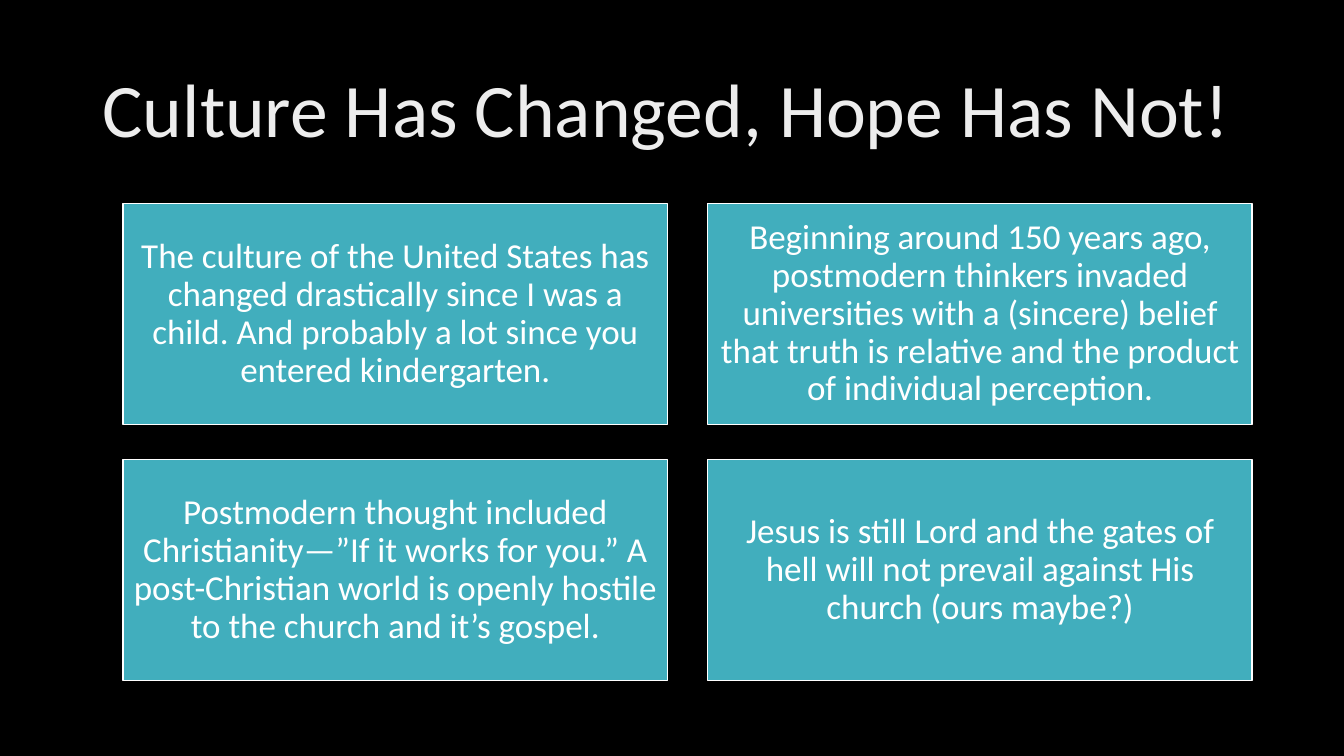
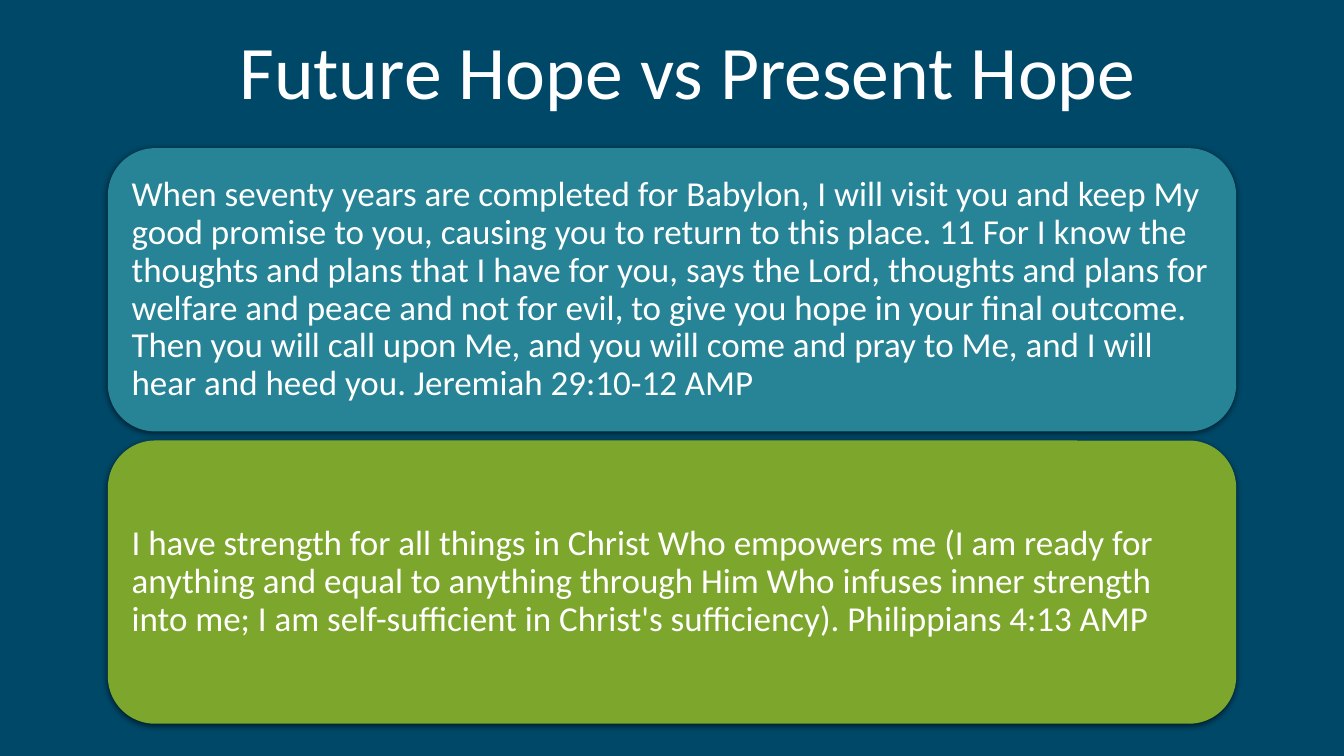
from lxml import etree
from pptx import Presentation
from pptx.dml.color import RGBColor
from pptx.enum import shapes, text
from pptx.oxml import parse_xml
from pptx.oxml.ns import nsdecls
from pptx.util import Inches, Pt

FONT = "Calibri"
WHITE, SOFT_WHITE = "FFFFFF", "EDEDED"
BLACK, NAVY = "000000", "004868"
AQUA, TEAL, GREEN = "41AEBD", "268496", "7DA62C"
TITLE_SIZE, BODY_SIZE = 54, 25

CULTURE_CARDS = [
    "The culture of the United States has changed drastically since I was a child. "
    "And probably a lot since you entered kindergarten.",
    "Beginning around 150 years ago, postmodern thinkers invaded universities with a "
    "(sincere) belief that truth is relative and the product of individual perception.",
    "Postmodern thought included Christianity—”If it works for you.” A post-Christian "
    "world is openly hostile to the church and it’s gospel.",
    "Jesus is still Lord and the gates of hell will not prevail against His church "
    "(ours maybe?)",
]
HOPE_PANELS = [
    (TEAL,
     "When seventy years are completed for Babylon, I will visit you and keep My good "
     "promise to you, causing you to return to this place. 11 For I know the thoughts and "
     "plans that I have for you, says the Lord, thoughts and plans for welfare and peace "
     "and not for evil, to give you hope in your final outcome. Then you will call upon "
     "Me, and you will come and pray to Me, and I will hear and heed you. "
     "Jeremiah 29:10-12 AMP"),
    (GREEN,
     "I have strength for all things in Christ Who empowers me (I am ready for anything "
     "and equal to anything through Him Who infuses inner strength into me; I am "
     "self-sufficient in Christ's sufficiency). Philippians 4:13 AMP"),
]


def rgb(value):
    """Turn a hex string into a colour."""
    return RGBColor.from_string(value)


def write(sp, content, size, color, align):
    """Set one vertically centred paragraph in a shape."""
    tf = sp.text_frame
    tf.word_wrap = True
    tf.vertical_anchor = text.MSO_ANCHOR.MIDDLE
    tf.margin_left = tf.margin_right = Inches(0.1)
    tf.margin_top = tf.margin_bottom = Inches(0.1)
    p = tf.paragraphs[0]
    p.text = content
    p.alignment = align
    p.line_spacing = 0.9
    p.font.name = FONT
    p.font.size = Pt(size)
    p.font.color.rgb = rgb(color)


def add_slide(prs, background):
    """Add a blank slide with a plain background."""
    s = prs.slides.add_slide(prs.slide_layouts[6])
    s.background.fill.solid()
    s.background.fill.fore_color.rgb = rgb(background)
    return s


def add_title(s, content, box, color, align):
    """Add the slide title in the given box."""
    sp = s.shapes.add_textbox(*map(Inches, box))
    write(sp, content, TITLE_SIZE, color, align)


def add_block(s, kind, box, fill, content, align):
    """Add a filled shape holding body text."""
    sp = s.shapes.add_shape(kind, *map(Inches, box))
    sp.shadow.inherit = False
    sp.fill.solid()
    sp.fill.fore_color.rgb = rgb(fill)
    sp.line.fill.background()
    write(sp, content, BODY_SIZE, WHITE, align)
    return sp


def add_soft_shadow(sp):
    """Give a shape a soft shadow below it."""
    effects = sp._element.spPr.find("{*}effectLst")
    effects.append(parse_xml(
        f'<a:outerShdw {nsdecls("a")} blurRad="{Pt(4.5)}" dist="{Pt(1.5)}" '
        'dir="5400000" algn="ctr" rotWithShape="0"><a:srgbClr val="000000">'
        '<a:alpha val="63000"/></a:srgbClr></a:outerShdw>'))


def add_card_grid(s, box, cards, columns=2, gap_x=0.4, gap_y=0.35):
    """Fill a box with an even grid of outlined cards."""
    left, top, width, height = box
    rows = -(-len(cards) // columns)
    card_w = (width - gap_x * (columns - 1)) / columns
    card_h = (height - gap_y * (rows - 1)) / rows
    for i, content in enumerate(cards):
        row, column = divmod(i, columns)
        card = (left + column * (card_w + gap_x), top + row * (card_h + gap_y),
                card_w, card_h)
        sp = add_block(s, shapes.MSO_SHAPE.RECTANGLE, card, AQUA, content,
                       text.PP_ALIGN.CENTER)
        sp.line.color.rgb = rgb(WHITE)
        sp.line.width = Pt(1)


def add_panel_stack(s, box, panels, gap=0.09):
    """Fill a box with equal rounded panels, one above the other."""
    left, top, width, height = box
    panel_h = (height - gap * (len(panels) - 1)) / len(panels)
    for i, (fill, content) in enumerate(panels):
        panel = (left, top + i * (panel_h + gap), width, panel_h)
        sp = add_block(s, shapes.MSO_SHAPE.ROUNDED_RECTANGLE, panel, fill, content,
                       text.PP_ALIGN.LEFT)
        add_soft_shadow(sp)


def build_culture_slide(prs):
    """Build the slide on changing culture."""
    s = add_slide(prs, BLACK)
    add_title(s, "Culture Has Changed, Hope Has Not!", (0.92, 0.4, 11.78, 1.45),
              SOFT_WHITE, text.PP_ALIGN.LEFT)
    add_card_grid(s, (1.22, 2.02, 11.2, 4.73), CULTURE_CARDS)


def build_hope_slide(prs):
    """Build the slide comparing future and present hope."""
    s = add_slide(prs, NAVY)
    add_title(s, "Future Hope vs Present Hope", (1.07, 0.02, 11.5, 1.45),
              WHITE, text.PP_ALIGN.CENTER)
    add_panel_stack(s, (1.07, 1.47, 11.19, 5.71), HOPE_PANELS)


def main():
    """Build and save the presentation."""
    prs = Presentation()
    prs.slide_width, prs.slide_height = Inches(13.33), Inches(7.5)
    build_culture_slide(prs)
    build_hope_slide(prs)
    prs.save("out.pptx")


if __name__ == "__main__":
    main()
